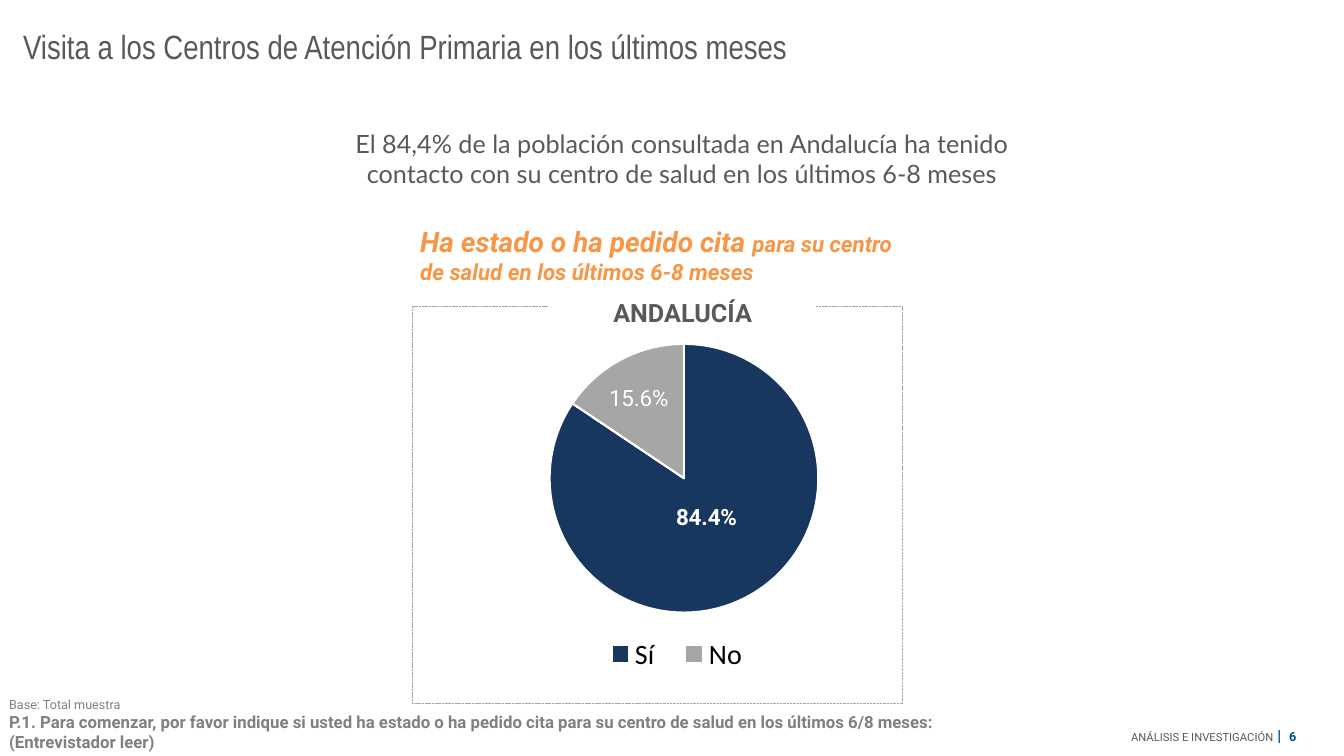
from lxml import etree
from pptx import Presentation
from pptx.chart.data import CategoryChartData
from pptx.dml.color import RGBColor
from pptx.enum.chart import XL_CHART_TYPE as ChartType
from pptx.enum.chart import XL_LABEL_POSITION as LabelPosition
from pptx.enum.chart import XL_LEGEND_POSITION as LegendPosition
from pptx.enum.dml import MSO_LINE_DASH_STYLE as Dash
from pptx.enum.shapes import MSO_SHAPE as Shape
from pptx.enum.text import MSO_ANCHOR as Anchor
from pptx.enum.text import MSO_AUTO_SIZE as AutoSize
from pptx.enum.text import PP_ALIGN as Align
from pptx.oxml import parse_xml
from pptx.oxml.ns import nsdecls
from pptx.util import Cm, Pt

COLORS = {
    "text": "595959", "note": "808080", "accent": "F79646", "page": "00478F",
    "yes": "17375E", "no": "A6A6A6", "white": "FFFFFF", "black": "000000",
}


def write(shape, paragraphs, font="Roboto", color="text", align=Align.LEFT,
          anchor=Anchor.TOP, wrap=True, after=0, inset=(0.25, 0.13)):
    """Fill a shape with paragraphs, each a list of (text, size, options) runs."""
    frame = shape.text_frame
    frame.auto_size = AutoSize.NONE
    frame.word_wrap = wrap
    frame.vertical_anchor = anchor
    frame.margin_left = frame.margin_right = Cm(inset[0])
    frame.margin_top = frame.margin_bottom = Cm(inset[1])
    for index, spans in enumerate(paragraphs):
        para = frame.add_paragraph() if index else frame.paragraphs[0]
        para.alignment = align
        para.space_after = Pt(after)
        for text, size, options in spans:
            span = para.add_run()
            span.text = text
            span.font.name = font
            span.font.size = Pt(size)
            span.font.bold = options.get("bold", False)
            span.font.italic = options.get("italic", False)
            span.font.color.rgb = RGBColor.from_string(COLORS[options.get("color", color)])


def manual_layout(x, y, *size, inner=False):
    """Build a chart layout element in fractions of the chart's size."""
    layout = parse_xml(f"<c:layout {nsdecls('c')}><c:manualLayout/></c:layout>")
    values = [("layoutTarget", "inner")] if inner else []
    if size:
        values += [("xMode", "edge"), ("yMode", "edge")]
    values += zip("xywh", (x, y, *size))
    for name, value in values:
        item = etree.SubElement(layout[0], layout.tag.replace("layout", name))
        item.set("val", str(value))
    return layout


deck = Presentation()
deck.slide_width, deck.slide_height = Cm(33.87), Cm(19.05)
page = deck.slides.add_slide(deck.slide_layouts[5])

# Title, headline and notes
title = page.shapes.title
title.left, title.top, title.width, title.height = Cm(0.33), Cm(0.53), Cm(27.03), Cm(2.31)
write(title, [[("Visita a los Centros de Atención Primaria en los últimos meses", 24, {})]],
      font="Arial Narrow")

footer = page.shapes.add_textbox(Cm(28.07), Cm(18.16), Cm(4.85), Cm(0.74))
write(footer, [[("ANÁLISIS E INVESTIGACIÓN", 8, {}), (" ", 11, {}),
                ("|  ", 11, {"bold": True, "color": "page"}),
                ("6", 9, {"bold": True, "color": "page"})]],
      align=Align.RIGHT, anchor=Anchor.MIDDLE, wrap=False)

base_note = page.shapes.add_textbox(Cm(0), Cm(17.47), Cm(26.21), Cm(1.58))
write(base_note, [
    [("Base: Total muestra", 9, {})],
    [("P.1. Para comenzar, por favor indique si usted ha estado o ha pedido cita para su "
      "centro de salud en los últimos 6/8 meses: (Entrevistador leer)", 12, {"bold": True})],
], color="note", anchor=Anchor.BOTTOM, inset=(0.23, 0.1))

question = page.shapes.add_textbox(Cm(10.34), Cm(5.54), Cm(13.06), Cm(1.8))
emphasis = {"bold": True, "italic": True}
write(question, [[("Ha estado o ha pedido cita ", 20, emphasis),
                  ("para su centro de salud en los últimos 6-8 meses", 16, emphasis)]],
      color="accent", after=6)

headline = page.shapes.add_textbox(Cm(8.46), Cm(2.69), Cm(17.45), Cm(2.59))
write(headline, [[("El 84,4% de la población consultada en Andalucía ha tenido contacto "
                   "con su centro de salud en los últimos 6-8 meses", 18, {})]],
      font="Lato", align=Align.CENTER, anchor=Anchor.MIDDLE, after=6)

# Dashed frame
border = page.shapes.add_shape(Shape.RECTANGLE, Cm(10.39), Cm(7.72), Cm(12.34), Cm(10.01))
border.shadow.inherit = False
border.fill.background()
border.line.color.rgb = RGBColor.from_string(COLORS["no"])
border.line.width = Pt(0.25)
border.line.dash_style = Dash.SQUARE_DOT

# Pie chart
data = CategoryChartData(number_format="0.0")
data.categories = ["Sí", "No"]
data.add_series("Andalucía", (84.4, 15.6))
chart = page.shapes.add_chart(ChartType.PIE, Cm(11.4), Cm(7.77), Cm(11.56), Cm(9.96), data).chart
chart.has_title = False
chart.font.name = "Calibri"
chart.font.size = Pt(10)
chart.font.color.rgb = RGBColor.from_string(COLORS["black"])

chart.has_legend = True
legend = chart.legend
legend.position = LegendPosition.BOTTOM
legend.include_in_layout = False
legend.font.name = "Calibri"
legend.font.size = Pt(20)
legend.font.color.rgb = RGBColor.from_string(COLORS["black"])

plot_area = chart._chartSpace.chart.plotArea
for old_layout in plot_area.findall("{*}layout"):
    plot_area.remove(old_layout)
plot_area.insert(0, manual_layout(0.21, 0.09, 0.59, 0.68, inner=True))
legend_xml = legend._element
for old_layout in legend_xml.findall("{*}layout"):
    legend_xml.remove(old_layout)
legend_xml.find("{*}legendPos").addnext(manual_layout(0.3, 0.82, 0.38, 0.11))

plot = chart.plots[0]
plot.vary_by_categories = True
slices = [("yes", True, (-0.02, -0.05)), ("no", False, (-0.03, -0.05))]
for index, (color, bold, offset) in enumerate(slices):
    point = plot.series[0].points[index]
    point.format.fill.solid()
    point.format.fill.fore_color.rgb = RGBColor.from_string(COLORS[color])
    point.format.line.color.rgb = RGBColor.from_string(COLORS["white"])
    point.format.line.width = Pt(1.5)
    label = point.data_label
    label.font.name = "Roboto"
    label.font.size = Pt(16)
    label.font.bold = bold
    label.font.color.rgb = RGBColor.from_string(COLORS["white"])
    label.position = LabelPosition.CENTER
    label_index = plot.series[0]._element.findall("{*}dLbls/{*}dLbl/{*}idx")[index]
    label_index.addnext(parse_xml(
        f'<c:numFmt {nsdecls("c")} formatCode="0.0\\%" sourceLinked="0"/>'))
    label_index.addnext(manual_layout(*offset))

# Region name over the frame's top edge
region = page.shapes.add_textbox(Cm(13.84), Cm(7.42), Cm(6.73), Cm(0.91))
write(region, [[("ANDALUCÍA", 18, {"bold": True})]],
      align=Align.CENTER, anchor=Anchor.MIDDLE, after=6)
for box in (question, region):
    box.fill.solid()
    box.fill.fore_color.rgb = RGBColor.from_string(COLORS["white"])

deck.save("out.pptx")
